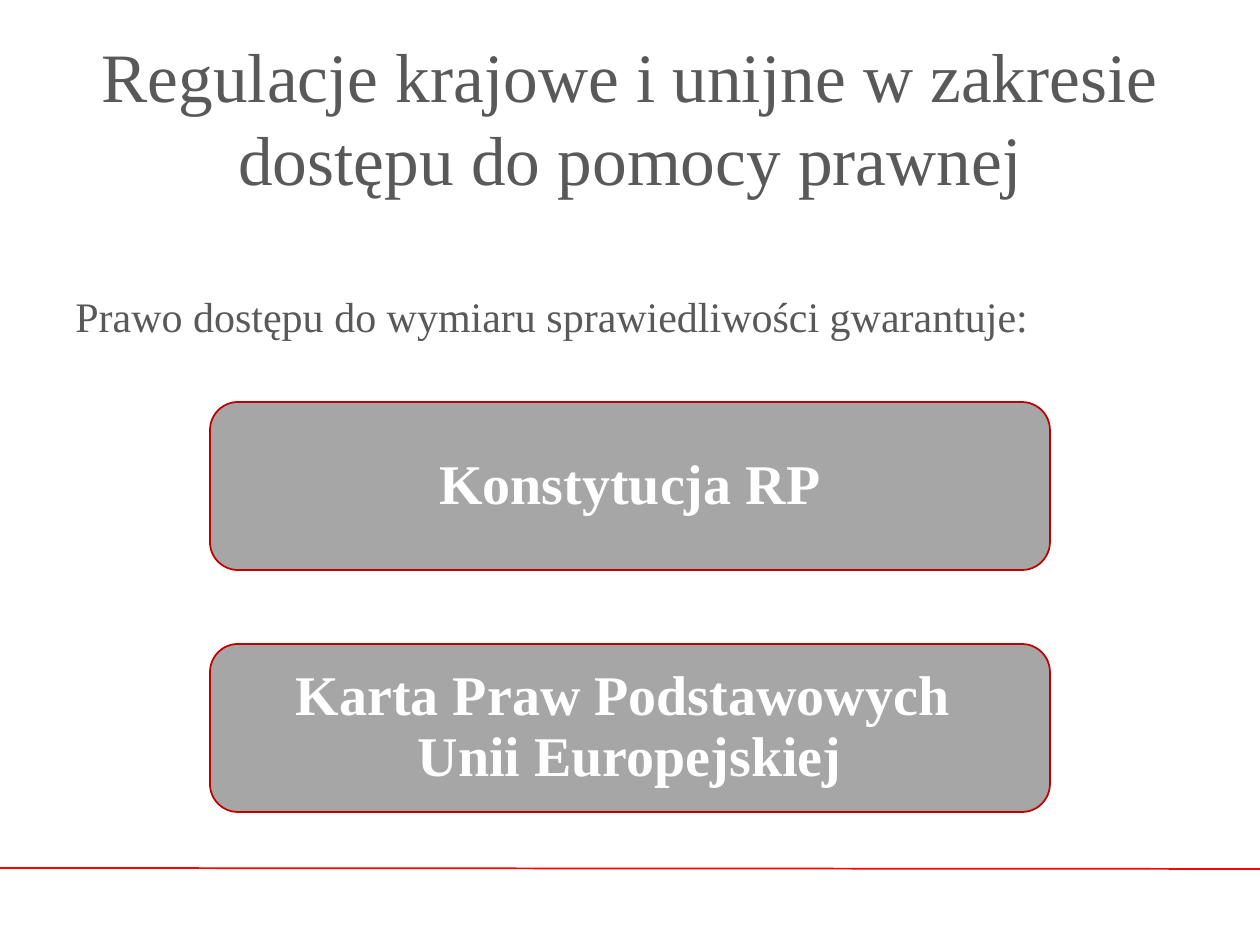
from lxml import etree
from pptx import Presentation
from pptx.dml.color import RGBColor
from pptx.enum.shapes import MSO_CONNECTOR, MSO_SHAPE
from pptx.enum.text import MSO_ANCHOR, PP_ALIGN
from pptx.oxml.ns import qn
from pptx.util import Emu, Pt

CENTER, JUSTIFY = PP_ALIGN.CENTER, PP_ALIGN.JUSTIFY
TOP, MIDDLE = MSO_ANCHOR.TOP, MSO_ANCHOR.MIDDLE
ROUNDED, STRAIGHT = MSO_SHAPE.ROUNDED_RECTANGLE, MSO_CONNECTOR.STRAIGHT
FONT = "Times New Roman"
GREY_TEXT = "595959"


def px(*lengths):
    return [Emu(round(length * 914400 / 126)) for length in lengths]


def write(box, lines, size, color, align, anchor, bold=False):
    frame = box.text_frame
    frame.word_wrap = True
    frame.vertical_anchor = anchor
    para = frame.paragraphs[0]
    para.alignment = align
    for index, line in enumerate(lines):
        if index:
            para.add_line_break()
        span = para.add_run()
        span.text = line
        span.font.name = FONT
        span.font.size = Pt(size)
        span.font.bold = bold
        span.font.color.rgb = RGBColor.from_string(color)
    return para


deck = Presentation()
deck.slide_width, deck.slide_height = px(1260, 945)
page = deck.slides.add_slide(deck.slide_layouts[6])

# Title and lead-in sentence
title = page.shapes.add_textbox(*px(63, 38, 1134, 157))
write(title, ["Regulacje krajowe i unijne w zakresie dostępu do pomocy prawnej"],
      39.6, GREY_TEXT, CENTER, MIDDLE)
lead = page.shapes.add_textbox(*px(63, 284, 1134, 70))
write(lead, ["Prawo dostępu do wymiaru sprawiedliwości gwarantuje:"],
      24, GREY_TEXT, JUSTIFY, TOP)

# Red rule above the footer
rule = page.shapes.add_connector(STRAIGHT, *px(0, 868, 1260, 869))
rule.line.color.rgb = RGBColor.from_string("FF0000")
rule.line.width = Pt(1)
etree.SubElement(rule.element.spPr, qn("a:effectLst"))

# Legal acts, one rounded panel each
acts = [
    ["Konstytucja RP"],
    ["Karta Praw Podstawowych ", "Unii Europejskiej"],
]
for row, lines in enumerate(acts):
    panel = page.shapes.add_shape(ROUNDED, *px(210, 402 + row * 242, 840, 168))
    panel.shadow.inherit = False
    panel.fill.solid()
    panel.fill.fore_color.rgb = RGBColor.from_string("A6A6A6")
    panel.line.color.rgb = RGBColor.from_string("C00000")
    panel.line.width = Pt(1)
    para = write(panel, lines, 32, "FFFFFF", CENTER, MIDDLE, bold=True)
    para.line_spacing = 0.9

deck.save("out.pptx")
